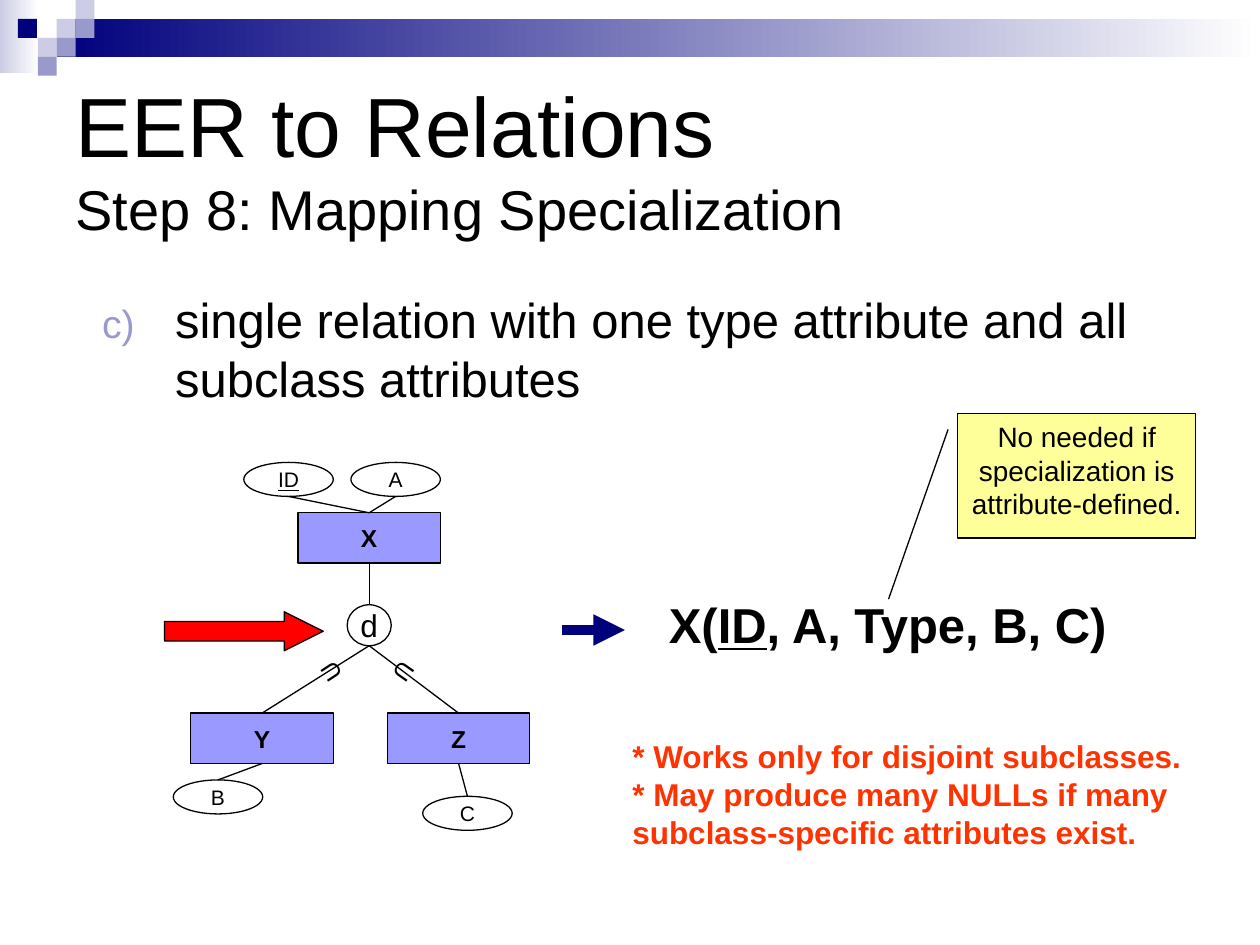
from dataclasses import dataclass
from lxml import etree
from pptx import Presentation
from pptx.dml.color import RGBColor
from pptx.enum.shapes import MSO_CONNECTOR, MSO_SHAPE
from pptx.enum.text import MSO_ANCHOR, MSO_AUTO_SIZE, PP_ALIGN
from pptx.oxml.ns import qn
from pptx.util import Inches, Pt

RECT, OVAL = MSO_SHAPE.RECTANGLE, MSO_SHAPE.OVAL
CALLOUT, UP_ARROW = MSO_SHAPE.LINE_CALLOUT_1, MSO_SHAPE.UP_ARROW
STRAIGHT = MSO_CONNECTOR.STRAIGHT
LEFT, CENTER = PP_ALIGN.LEFT, PP_ALIGN.CENTER
TOP, MIDDLE = MSO_ANCHOR.TOP, MSO_ANCHOR.MIDDLE
FIT_SHAPE, NO_FIT = MSO_AUTO_SIZE.SHAPE_TO_FIT_TEXT, MSO_AUTO_SIZE.NONE


@dataclass(frozen=True)
class Theme:
    font: str = "Arial"
    ink: str = "000000"
    paper: str = "FFFFFF"
    navy: str = "00007D"
    mist: str = "CCCCE6"
    lilac: str = "9999CC"
    entity: str = "9999FF"
    note: str = "FFFF99"
    alert: str = "FF0000"
    warning: str = "FF3300"
    title: int = 48
    subtitle: int = 32
    body: int = 28
    remark: int = 18
    callout: int = 16
    label: int = 14
    attribute: int = 12
    hairline: float = 0.75
    arrow: int = 6


theme = Theme()
deck = Presentation()
deck.slide_width, deck.slide_height = Inches(10), Inches(7.5)
COL, ROW = deck.slide_width / 100, deck.slide_height / 75
slide = deck.slides.add_slide(deck.slide_layouts[1])
shapes = slide.shapes


def cells(*columns_and_rows):
    return [round(v * (ROW if i % 2 else COL)) for i, v in enumerate(columns_and_rows)]


def write(shape, *paragraphs, size, color=theme.ink, bold=False, align=LEFT,
          anchor=TOP, wrap=True, fit=NO_FIT):
    frame = shape.text_frame
    frame.word_wrap, frame.vertical_anchor, frame.auto_size = wrap, anchor, fit
    for number, runs in enumerate(paragraphs):
        paragraph = frame.add_paragraph() if number else frame.paragraphs[0]
        paragraph.alignment = align
        for text, changes in runs:
            if text == "\n":
                paragraph.add_line_break()
                continue
            run = paragraph.add_run()
            run.text = text
            run.font.name = theme.font
            run.font.size = Pt(changes.get("size", size))
            run.font.bold = bold
            run.font.underline = changes.get("underline", False)
            run.font.color.rgb = RGBColor.from_string(color)


TILE = 1.5
banner = [((0, 0, 3.1, 5.8), theme.mist, True), ((4.5, 1.5, 95.5, 3), theme.navy, True)]
tiles = [(3, 1, theme.mist), (4, 0, theme.mist), (4, 1, theme.lilac), (2, 2, theme.mist),
         (0.95, 1, theme.navy), (3, 2, theme.lilac), (2, 3, theme.lilac)]
banner += [((c * TILE, r * TILE, TILE, TILE), color, False) for c, r, color in tiles]
for area, color, fades in banner:
    piece = shapes.add_shape(RECT, *cells(*area))
    piece.shadow.inherit = False
    piece.line.fill.background()
    if fades:
        piece.fill.gradient()
        piece.fill.gradient_angle = 0
        for stop, position, shade in zip(piece.fill.gradient_stops, (0, 1), (color, theme.paper)):
            stop.position = position
            stop.color.rgb = RGBColor.from_string(shade)
    else:
        piece.fill.solid()
        piece.fill.fore_color.rgb = RGBColor.from_string(color)

heading, content = shapes.title, slide.placeholders[1]
for holder, area in ((heading, (5, 5, 90, 15)), (content, (2.1, 22.5, 90, 14.2))):
    holder.left, holder.top, holder.width, holder.height = cells(*area)
write(heading, [("EER to Relations", {}), (" ", {"size": theme.subtitle}), ("\n", {}),
                ("Step 8: Mapping Specialization", {"size": theme.subtitle})],
      size=theme.title, anchor=MIDDLE)
write(content, [("single relation with one type attribute and all subclass attributes", {})],
      size=theme.body)
item = content.text_frame.paragraphs[0]
item.level = 1
numbering = item._p.get_or_add_pPr()
numbering.set("marL", str(Inches(1.08)))
numbering.set("indent", str(Inches(-0.58)))
before = etree.SubElement(numbering, qn("a:spcBef"))
etree.SubElement(before, qn("a:spcPct"), val="20000")
tint = etree.SubElement(numbering, qn("a:buClr"))
etree.SubElement(tint, qn("a:srgbClr"), val=theme.lilac)
etree.SubElement(numbering, qn("a:buSzPct"), val="80000")
etree.SubElement(numbering, qn("a:buFont"), typeface=theme.font)
etree.SubElement(numbering, qn("a:buAutoNum"), type="alphaLcParenR", startAt="3")

entity = (RECT, 11.3, 4, theme.entity, theme.label)
attribute = (OVAL, 7.1, 2.7, theme.paper, theme.attribute)
disjoint = (OVAL, 3.5, 3.25, theme.paper, theme.remark)
diagram = {
    "X": (29.3, 40.7, entity), "Z": (36.4, 56.6, entity), "Y": (20.8, 56.6, entity),
    "d": (29.3, 48, disjoint),
    "ID": (22.9, 36.7, attribute), "A": (31.4, 36.7, attribute),
    "B": (17.3, 61.9, attribute), "C": (37.1, 63.2, attribute),
}
figures = [(kind, (center - width / 2, top, width, height), fill, (), 0, name,
            dict(size=size, bold=kind == RECT, anchor=MIDDLE, wrap=False))
           for name, (center, top, (kind, width, height, fill, size)) in diagram.items()]
figures += [
    (CALLOUT, (76, 32.8, 18.9, 9.9), theme.note, (0.13, -0.04, 1.49, -0.29), 0,
     "No needed if specialization is attribute-defined.", dict(size=theme.callout)),
    (UP_ARROW, (17.8, 43.8, 3.1, 12.6), theme.alert, (0.5, 1), 90, "", dict(size=theme.label)),
]
for kind, area, fill, adjustments, turn, text, style in figures:
    figure = shapes.add_shape(kind, *cells(*area))
    figure.shadow.inherit = False
    figure.rotation = turn
    for index, value in enumerate(adjustments):
        figure.adjustments[index] = value
    figure.fill.solid()
    figure.fill.fore_color.rgb = RGBColor.from_string(fill)
    figure.line.color.rgb = RGBColor.from_string(theme.ink)
    figure.line.width = Pt(theme.hairline)
    if text:
        write(figure, [(text, {"underline": text == "ID"})], align=CENTER, **style)

links = []
for upper, lower in (("ID", "X"), ("A", "X"), ("X", "d"), ("d", "Y"), ("d", "Z"),
                     ("Y", "B"), ("Z", "C")):
    center, top, (_, _, height, _, _) = diagram[upper]
    links.append(((center, top + height, *diagram[lower][:2]), theme.ink, theme.hairline, False))
links.append(((44.6, 50, 49.6, 50), theme.navy, theme.arrow, True))
for ends, color, width, pointed in links:
    link = shapes.add_connector(STRAIGHT, *cells(*ends))
    link.line.color.rgb = RGBColor.from_string(color)
    link.line.width = Pt(width)
    if pointed:
        etree.SubElement(link.line._get_or_add_ln(), qn("a:tailEnd"), type="triangle")
    etree.SubElement(link._element.spPr, qn("a:effectLst"))

subset = dict(size=theme.label, wrap=False)
captions = [
    ((52.1, 46.7, 39.2, 5.7), 0,
     [[("X(", {}), ("ID", {"underline": True}), (", A, Type, B, C)", {})]],
     dict(size=theme.body, bold=True)),
    ((24.5, 51.7, 3.4, 3.3), 236.6, [[("U", {})]], subset),
    ((30.4, 51.7, 3.4, 3.3), 125.2, [[("U", {})]], subset),
    ((49.2, 58, 47.2, 10.1), 0,
     [[("* Works only for disjoint subclasses.", {})],
      [("* May produce many NULLs if many subclass-specific attributes exist.", {})]],
     dict(size=theme.remark, color=theme.warning, bold=True)),
]
for area, turn, paragraphs, style in captions:
    caption = shapes.add_textbox(*cells(*area))
    caption.rotation = turn
    write(caption, *paragraphs, fit=FIT_SHAPE, **style)

deck.save("out.pptx")
